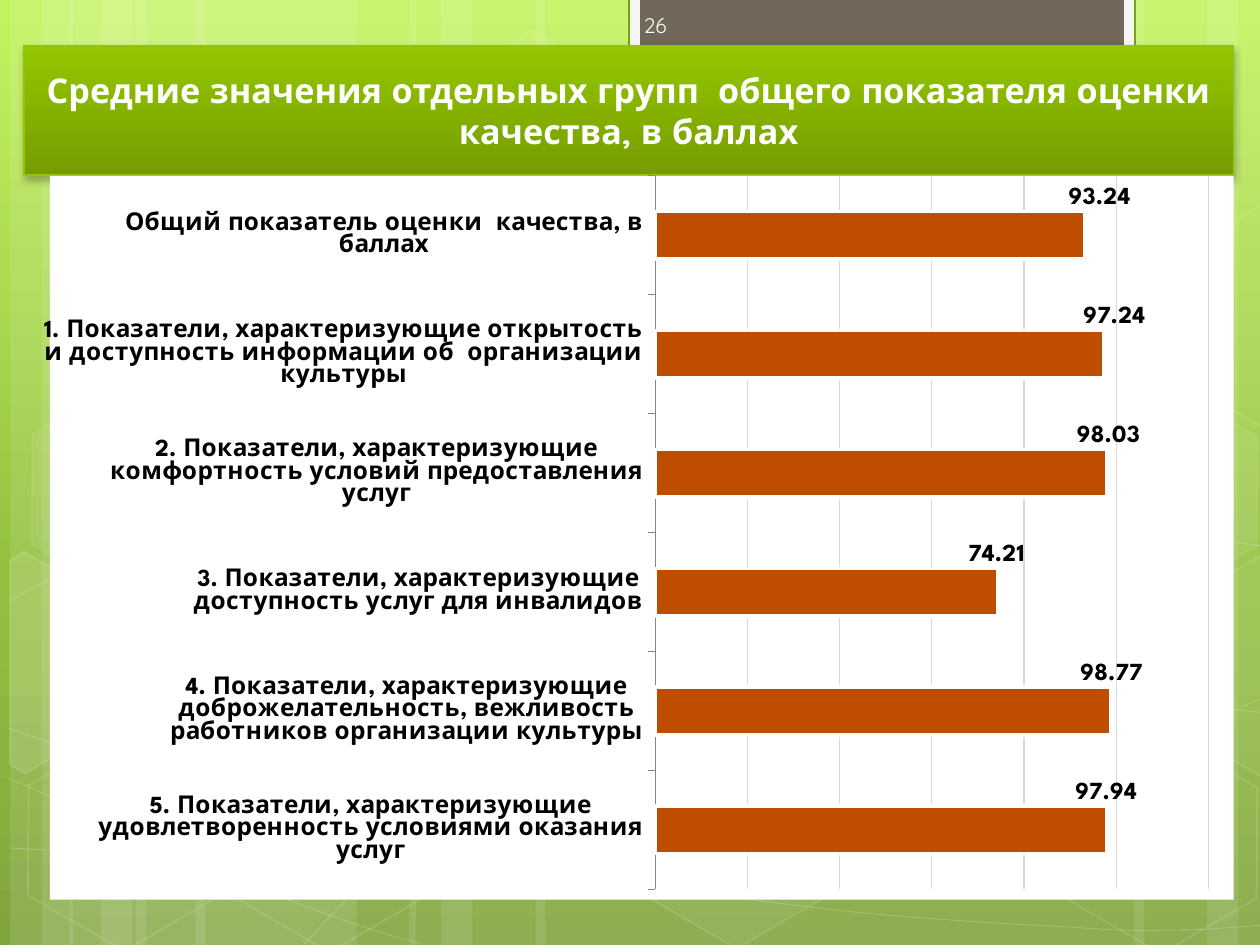
from lxml import etree
from pptx import Presentation
from pptx import util as u
from pptx.chart.data import CategoryChartData
from pptx.dml.color import RGBColor
from pptx.enum import chart as charts, shapes, text
from pptx.oxml import parse_xml
from pptx.oxml.ns import nsdecls, qn

WIDTH, HEIGHT = u.Inches(10), u.Inches(7.5)
COLUMNS, ROWS = 10, 7.5
CHART_WIDTH, CHART_HEIGHT = 9.44, 5.75

WHITE = RGBColor(0xFF, 0xFF, 0xFF)
BLACK = RGBColor(0, 0, 0)
LIME_LIGHT = RGBColor(0xC3, 0xF3, 0x5F)
LIME_MIDDLE = RGBColor(0x93, 0xBF, 0x3F)
LIME_DARK = RGBColor(0x81, 0xA5, 0x3E)
TITLE_LIGHT = RGBColor(0x94, 0xC6, 0x00)
TITLE_DARK = RGBColor(0x76, 0x9D, 0x00)
TAB_EDGE = RGBColor(0x74, 0xA5, 0x10)
TAB_PALE = RGBColor(0xF5, 0xF5, 0xF5)
TAB_BROWN = RGBColor(0x71, 0x68, 0x5A)
BAR = RGBColor(0xBF, 0x4D, 0x00)
AXIS = RGBColor(0x86, 0x86, 0x86)
GRID = RGBColor(0xD9, 0xD9, 0xD9)
NUMBER = RGBColor(0xFE, 0xFE, 0xFE)

# left, width of the full-height bands
BANDS = [(1.08, 1.75), (0.08, 0.5), (0.33, 0.83), (1.55, 1.75), (0.55, 0.5), (0.8, 0.83),
         (7.33, 1.75), (9.58, 0.5), (9, 0.83), (4.25, 3.08), (3.25, 0.5), (3.5, 0.83)]
# a start point, then three points for each Bezier piece
CURVES = [
    [(0.07, 6.73), (0.61, 6.76), (1.15, 6.79), (1.9, 6.78), (2.65, 6.77), (3.58, 6.75),
     (4.58, 6.65), (5.58, 6.55), (7, 6.36), (7.92, 6.17), (8.83, 5.98), (9.77, 5.68), (10.07, 5.51)],
    [(0.07, 4.77), (0.36, 4.61), (0.65, 4.46), (1.21, 4.31), (1.78, 4.16), (2.59, 3.94),
     (3.47, 3.87), (4.36, 3.8), (5.44, 3.79), (6.54, 3.87), (7.64, 3.95), (9.47, 4.26), (10.07, 4.34)],
    [(0.06, 6.17), (1.27, 6.72), (2.47, 7.27), (3.34, 7.49)],
    [(0.07, 5.78), (0.38, 5.89), (0.7, 6), (1.28, 6.16), (1.86, 6.31), (2.73, 6.56),
     (3.57, 6.73), (4.4, 6.9), (5.45, 7.08), (6.28, 7.18), (7.11, 7.29), (8, 7.33), (8.53, 7.36),
     (9.05, 7.4), (9.19, 7.38), (9.45, 7.38), (9.71, 7.37), (9.89, 7.35), (10.07, 7.34)],
    [(2.42, 7.49), (2.6, 7.29), (2.78, 7.09), (3.02, 6.91), (3.26, 6.73), (3.6, 6.53),
     (3.88, 6.39), (4.16, 6.25), (4.33, 6.19), (4.7, 6.09), (5.06, 5.99), (5.73, 5.85), (6.08, 5.78),
     (6.44, 5.71), (6.49, 5.71), (6.8, 5.69), (7.11, 5.66), (7.6, 5.63), (7.94, 5.62),
     (8.29, 5.61), (8.86, 5.62), (8.86, 5.62), (8.86, 5.62), (9.53, 5.62), (9.53, 5.62),
     (9.71, 5.63), (9.88, 5.64), (9.97, 5.65), (10.06, 5.66), (10.03, 5.65), (10.06, 5.66)],
]
# left, top, fill opacity, line opacity
HEXAGONS = [(3.34, 0.36, 4, 8), (4.97, 5.89, 6, 12), (0.11, 5.91, 0, 12),
            (0.14, 3.12, 7, 8), (1.74, 5.92, 0, 12), (7.53, 4.53, 10, 12),
            (8.34, 5.93, 0, 12), (8.34, 3.14, 7, 8)]
# points, fill opacity
CUT_HEXAGONS = [
    ([(0.08, 4.45), (0.19, 4.38), (0.96, 4.82), (0.95, 5.7), (0.2, 6.14), (0.08, 6.07)], 10),
    ([(9.26, 4.85), (10.01, 4.41), (10.09, 4.46), (10.09, 6.13), (10.02, 6.17), (9.26, 5.73)], 4),
    ([(9.26, 2.07), (10.01, 1.63), (10.1, 1.68), (10.09, 3.35), (10.02, 3.39), (9.26, 2.95)], 0),
]
# category, value, columns the label moves
SCORES = [
    ("Общий показатель оценки  качества, в баллах", 93.24, -0.17),
    ("1. Показатели, характеризующие открытость и доступность информации об  организации культуры", 97.24, -0.2),
    ("2. Показатели, характеризующие комфортность условий предоставления услуг", 98.03, -0.28),
    ("3. Показатели, характеризующие доступность услуг для инвалидов", 74.21, -0.27),
    ("4. Показатели, характеризующие доброжелательность, вежливость работников организации культуры", 98.77, -0.28),
    ("5. Показатели, характеризующие удовлетворенность условиями оказания услуг", 97.94, -0.29),
]


def x(columns):
    return round(WIDTH * columns / COLUMNS)


def y(rows):
    return round(HEIGHT * rows / ROWS)


def box(left, top, width, height):
    return x(left), y(top), x(width), y(height)


def set_format(target, **values):
    for name, value in values.items():
        setattr(target, name, value)


def set_color(fill, color, opacity=100):
    """Fill solidly, or not at all at zero opacity."""
    if not opacity:
        fill.background()
        return
    fill.solid()
    fill.fore_color.rgb = color
    if opacity < 100:
        color_element = fill._xPr.find(qn("a:solidFill"))[0]
        etree.SubElement(color_element, qn("a:alpha"), val=str(opacity * 1000))


def set_gradient(fill, element, stops):
    """Shade from top to bottom through (percent, color) stops."""
    fill.gradient()
    fill.gradient_angle = 270
    stop_list = element.find(".//" + qn("a:gsLst"))
    for old in list(stop_list):
        stop_list.remove(old)
    for percent, color in stops:
        stop = etree.SubElement(stop_list, qn("a:gs"), pos=str(percent * 1000))
        etree.SubElement(stop, qn("a:srgbClr"), val=str(color))


def style(shape, fill=WHITE, opacity=100, line=None, width=1, line_opacity=100):
    shape.shadow.inherit = False
    set_color(shape.fill, fill, opacity)
    set_color(shape.line.fill, line, line_opacity if line is not None else 0)
    if line is not None:
        shape.line.width = u.Pt(width)


def add_rectangle(slide, position, **look):
    style(slide.shapes.add_shape(shapes.MSO_SHAPE.RECTANGLE, *box(*position)), **look)


def add_hexagon(slide, left, top, opacity, line_opacity):
    shape = slide.shapes.add_shape(shapes.MSO_SHAPE.HEXAGON, *box(left, top, 1.75, 1.52))
    set_format(shape, rotation=30)
    shape.adjustments[0] = 0.285
    style(shape, opacity=opacity, line=WHITE, line_opacity=line_opacity)


def add_outline(slide, points, close=False, **look):
    (left, top), *rest = points
    builder = slide.shapes.build_freeform(x(left), y(top), scale=1.0)
    builder.add_line_segments([(x(a), y(b)) for a, b in rest], close=close)
    shape = builder.convert_to_shape()
    style(shape, line=WHITE, **look)
    return shape


def bend(shape):
    """Turn each three straight segments into one Bezier piece."""
    segments = list(shape._element.iter(qn("a:lnTo")))
    for first in range(0, len(segments), 3):
        piece = etree.Element(qn("a:cubicBezTo"))
        segments[first].addprevious(piece)
        for segment in segments[first:first + 3]:
            piece.append(segment[0])
            segment.getparent().remove(segment)


def add_backdrop(slide):
    set_gradient(slide.background.fill, slide.element,
                 [(0, LIME_LIGHT), (62, LIME_MIDDLE), (100, LIME_DARK)])
    for left, width in BANDS:
        add_rectangle(slide, (left, 0, width, ROWS), opacity=10)
    for points in CURVES:
        bend(add_outline(slide, points, opacity=0, width=0.5, line_opacity=20))
    for hexagon in HEXAGONS:
        add_hexagon(slide, *hexagon)
    for points, opacity in CUT_HEXAGONS:
        add_outline(slide, points, close=True, opacity=opacity, line_opacity=12)
    add_rectangle(slide, (0.5, 0.36, 9, 6.76), line=BLACK, width=0.5)
    add_rectangle(slide, (4.99, -0.02, 4.02, 0.76), fill=TAB_PALE, line=TAB_EDGE, width=1.25)
    add_rectangle(slide, (5.08, -0.02, 3.84, 0.68), fill=TAB_BROWN)


def write(shape, words, size, color, align, bold=False):
    set_format(shape.text_frame, text=words, word_wrap=True, vertical_anchor=text.MSO_ANCHOR.MIDDLE)
    paragraph = shape.text_frame.paragraphs[0]
    paragraph.alignment = align
    font = paragraph.runs[0].font
    set_format(font, name="Quicksand", size=u.Pt(size), bold=bold)
    font.color.rgb = color


def add_title(slide, words):
    title = slide.shapes.title
    slide.shapes._spTree.append(title._element)
    left, top, width, height = box(0.19, 0.36, 9.6, 1.03)
    set_format(title, left=left, top=top, width=width, height=height)
    set_gradient(title.fill, title._element, [(0, TITLE_LIGHT), (100, TITLE_DARK)])
    set_format(title.line, width=u.Pt(0.75))
    title.line.color.rgb = TITLE_LIGHT
    title._element.spPr.append(parse_xml(
        f'<a:effectLst {nsdecls("a")}><a:outerShdw blurRad="50800" dist="25400" dir="5400000">'
        '<a:srgbClr val="000000"><a:alpha val="28000"/></a:srgbClr></a:outerShdw></a:effectLst>'))
    write(title, words, 19.5, WHITE, text.PP_ALIGN.CENTER, bold=True)


def manual_layout(modes=(), **lengths):
    """Place a chart part by columns (x, w) and rows (y, h)."""
    layout = etree.Element(qn("c:layout"))
    manual = etree.SubElement(layout, qn("c:manualLayout"))
    for name, value in modes:
        etree.SubElement(manual, qn("c:" + name), val=value)
    for name, length in lengths.items():
        share = length / (CHART_WIDTH if name in "xw" else CHART_HEIGHT)
        etree.SubElement(manual, qn("c:" + name), val=str(share))
    return layout


def set_chart_font(font, bold=True):
    set_format(font, name="League Spartan", size=u.Pt(14), bold=bold)
    font.color.rgb = BLACK


def set_labels(series):
    set_format(series.data_labels, show_value=True, number_format="0.00", number_format_is_linked=False)
    set_chart_font(series.data_labels.font)
    for index, (_, _, shift) in enumerate(SCORES):
        label = series.points[index].data_label
        set_chart_font(label.font)
        label.position = charts.XL_LABEL_POSITION.OUTSIDE_END
        label._dLbl[0].addnext(manual_layout(x=shift, y=-0.29))
    labels = series.data_labels._element
    for leader in labels.findall(qn("c:showLeaderLines")):
        leader.set("val", "0")
    labels.append(parse_xml(
        f'<c:extLst {nsdecls("c")}><c:ext uri="{{CE6537A1-D6FC-4f65-9D91-7224C49458BB}}" '
        'xmlns:c15="http://schemas.microsoft.com/office/drawing/2012/chart">'
        '<c15:showLeaderLines val="0"/></c:ext></c:extLst>'))


def add_score_chart(slide):
    data = CategoryChartData(number_format="0.00")
    data.categories = [name for name, _, _ in SCORES]
    data.add_series("Series 1", [value for _, value, _ in SCORES])
    chart = slide.shapes.add_chart(charts.XL_CHART_TYPE.BAR_CLUSTERED,
                                   *box(0.35, 1.39, CHART_WIDTH, CHART_HEIGHT), data).chart
    set_format(chart, has_legend=False, has_title=False)
    set_chart_font(chart.font, bold=False)
    chart._chartSpace.find(qn("c:chart")).addnext(parse_xml(
        f'<c:spPr {nsdecls("c", "a")}><a:solidFill><a:srgbClr val="{WHITE}"/></a:solidFill>'
        '<a:ln><a:noFill/></a:ln></c:spPr>'))
    plot_area = chart._chartSpace.find(".//" + qn("c:plotArea"))
    for old in plot_area.findall(qn("c:layout")):
        plot_area.remove(old)
    modes = [("layoutTarget", "inner"), ("xMode", "edge"), ("yMode", "edge")]
    plot_area.insert(0, manual_layout(modes, x=4.83, y=0, w=4.41, h=5.67))

    set_format(chart.category_axis, reverse_order=True, major_tick_mark=charts.XL_TICK_MARK.OUTSIDE)
    set_chart_font(chart.category_axis.tick_labels.font)
    chart.category_axis.format.line.color.rgb = AXIS
    set_format(chart.value_axis, visible=False, minimum_scale=0, maximum_scale=120,
               major_unit=20, has_major_gridlines=True)
    grid_line = chart.value_axis.major_gridlines.format.line
    set_format(grid_line, width=u.Pt(0.75))
    grid_line.color.rgb = GRID

    plot = chart.plots[0]
    set_format(plot, gap_width=150, vary_by_categories=False)
    series = plot.series[0]
    set_color(series.format.fill, BAR)
    set_format(series.format.line, width=u.Pt(2))
    series.format.line.color.rgb = WHITE
    set_labels(series)


def main():
    presentation = Presentation()
    set_format(presentation, slide_width=WIDTH, slide_height=HEIGHT)
    slide = presentation.slides.add_slide(presentation.slide_layouts[5])
    add_backdrop(slide)
    number = slide.shapes.add_textbox(*box(5.01, 0, 1.46, 0.4))
    write(number, "26", 12, NUMBER, text.PP_ALIGN.LEFT)
    add_title(slide, "Средние значения отдельных групп  общего показателя оценки качества, в баллах")
    add_score_chart(slide)
    presentation.save("out.pptx")


if __name__ == "__main__":
    main()
